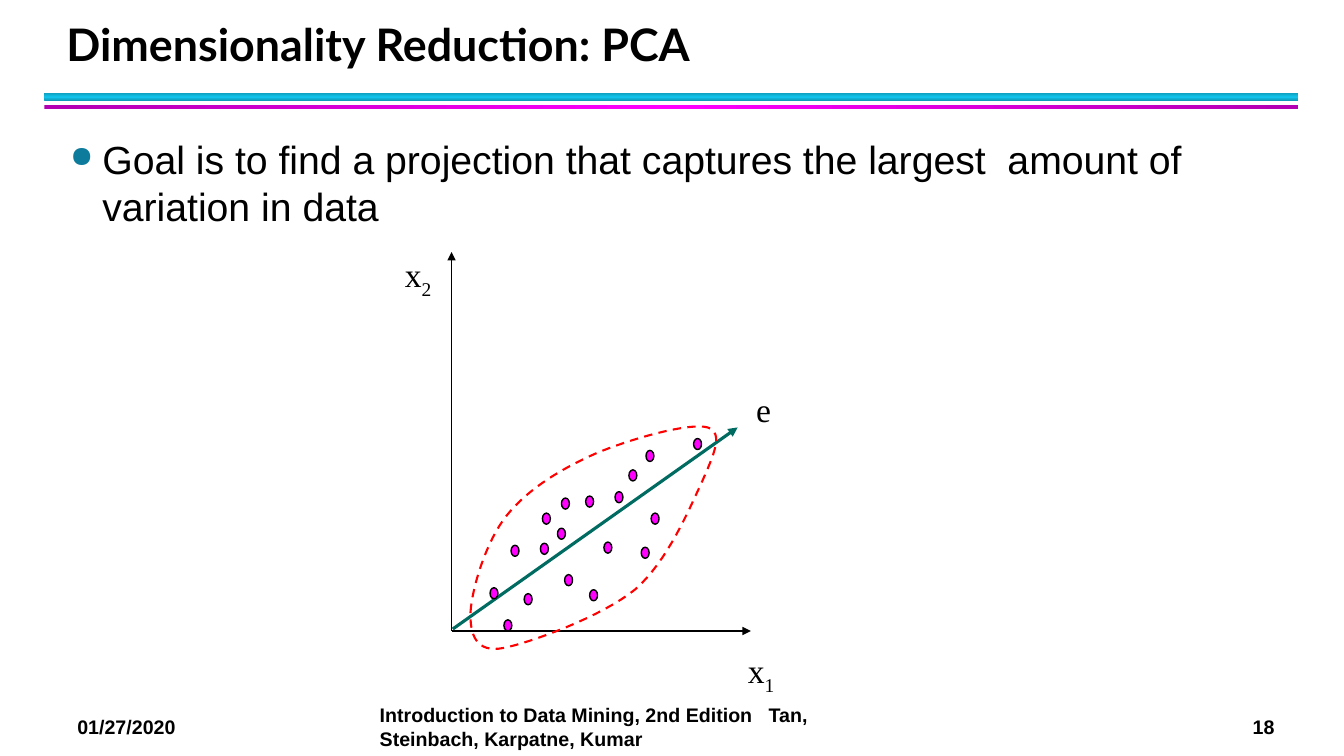
from collections import namedtuple
from copy import deepcopy

from lxml.etree import SubElement
from pptx import Presentation
from pptx.dml.color import RGBColor
from pptx.enum.dml import MSO_LINE
from pptx.enum.shapes import MSO_CONNECTOR, MSO_SHAPE
from pptx.enum.text import MSO_ANCHOR, PP_ALIGN
from pptx.oxml.ns import qn
from pptx.util import Cm, Pt

Box = namedtuple("Box", "left top width height")

BLACK, MAGENTA, RED, GREEN, TEAL = "000000", "FF00FF", "FF0000", "006B61", "0C7B9C"
BANDS = [
    (0, 0.2, 90, ("0E9BBA", "12C2E9", "0E9BBA")),
    (0.31, 0.1, 0, ("B200B2", MAGENTA, "B200B2")),
]
DOT_WIDTH, DOT_HEIGHT = 0.2, 0.28
DOTS = [
    (1.6, 2.02), (2.39, 2.83), (1.07, 0.95), (2.77, 2.45), (2.34, 2.07), (3.94, 2.1),
    (3.58, 0.9), (2.95, 1.28), (3.48, 3.26), (5.13, 2.83), (6.2, 4.71), (1.93, 0.8),
    (4.22, 3.37), (5, 4.41), (2.87, 3.21), (4.57, 3.92), (4.88, 1.97), (1.42, 0.14),
]
OUTLINE_START = (0.48, 0.48)
OUTLINE_CURVES = [
    ((0.51, 1.04), (0.86, 2.26), (1.4, 2.92)),
    ((1.93, 3.58), (2.77, 4.09), (3.63, 4.47)),
    ((4.47, 4.83), (5.99, 5.26), (6.45, 5.13)),
    ((6.88, 5), (6.6, 4.42), (6.3, 3.73)),
    ((5.99, 3.07), (5.44, 1.75), (4.62, 1.04)),
    ((3.78, 0.36), (1.98, -0.3), (1.3, -0.43)),
    ((0.61, -0.56), (0.46, -0.08), OUTLINE_START),
]
CURVE_STEPS = 16


def color(value):
    return RGBColor.from_string(value)


def apply_format(target, values):
    for name, value in values.items():
        setattr(target, name, value)


def place(shape, box):
    apply_format(shape, {name: Cm(value) for name, value in box._asdict().items()})


def add_run(paragraph, text, size, font_name, bold=False):
    run = paragraph.add_run()
    run.text = text
    apply_format(run.font, {"size": Pt(size), "name": font_name, "bold": bold})
    run.font.color.rgb = color(BLACK)
    return run


def add_text_box(slide, box, wrap=True, anchor=MSO_ANCHOR.TOP):
    shape = slide.shapes.add_textbox(*map(Cm, box))
    apply_format(shape.text_frame, {"word_wrap": wrap, "vertical_anchor": anchor})
    return shape.text_frame.paragraphs[0]


def add_bands(slide, box):
    for offset, height, angle, colors in BANDS:
        band = slide.shapes.add_shape(
            MSO_SHAPE.RECTANGLE, Cm(box.left), Cm(box.top + offset), Cm(box.width), Cm(height)
        )
        band.shadow.inherit = False
        band.line.fill.background()
        band.fill.gradient()
        band.fill.gradient_angle = angle
        stop_list = next(band._element.iter(qn("a:gsLst")))
        stop_list.append(deepcopy(stop_list[0]))
        for index, (stop, value) in enumerate(zip(band.fill.gradient_stops, colors)):
            stop.position = index / 2
            stop.color.rgb = color(value)


def add_title(slide, box):
    title = slide.shapes.title
    place(title, box)
    apply_format(title.text_frame, {"vertical_anchor": MSO_ANCHOR.BOTTOM, "word_wrap": True})
    paragraph = title.text_frame.paragraphs[0]
    apply_format(paragraph, {"alignment": PP_ALIGN.LEFT, "line_spacing": Pt(36)})
    add_run(paragraph, "Dimensionality Reduction: PCA", 32, "Lato", True)


def add_goal(slide, box):
    paragraph = add_text_box(slide, box)
    properties = paragraph._p.get_or_add_pPr()
    properties.set("marL", str(Cm(0.81)))
    properties.set("indent", str(-Cm(0.81)))
    bullet_color = SubElement(properties, qn("a:buClr"))
    SubElement(bullet_color, qn("a:srgbClr"), val=TEAL)
    SubElement(properties, qn("a:buSzPct"), val="75000")
    SubElement(properties, qn("a:buChar"), char="●")
    paragraph.space_after = Pt(4)
    text = "Goal is to find a projection that captures the largest  amount of variation in data"
    add_run(paragraph, text, 28, "Arial")


def add_arrow(slide, start, end, line_color, width):
    arrow = slide.shapes.add_connector(MSO_CONNECTOR.STRAIGHT, *map(Cm, start + end))
    arrow.line.color.rgb = color(line_color)
    arrow.line.width = Pt(width)
    SubElement(arrow.line._get_or_add_ln(), qn("a:tailEnd"), type="triangle")
    SubElement(arrow._element.spPr, qn("a:effectLst"))


def curve_points():
    start = OUTLINE_START
    for first, second, end in OUTLINE_CURVES:
        for step in range(1, CURVE_STEPS + 1):
            t = step / CURVE_STEPS
            weights = ((1 - t) ** 3, 3 * t * (1 - t) ** 2, 3 * t * t * (1 - t), t ** 3)
            yield tuple(
                sum(weight * value for weight, value in zip(weights, values))
                for values in zip(start, first, second, end)
            )
        start = end


def add_label(slide, box, text, subscript=""):
    paragraph = add_text_box(slide, box, False, MSO_ANCHOR.MIDDLE)
    paragraph.alignment = PP_ALIGN.CENTER
    add_run(paragraph, text, 24, "Times New Roman")
    if subscript:
        run = add_run(paragraph, subscript, 24, "Times New Roman")
        run._r.get_or_add_rPr().set("baseline", "-25000")


def add_projection(slide, box):
    bottom = box.top + box.height

    def at(across, up):
        return box.left + across, bottom - up

    add_arrow(slide, at(0, 0), at(0, box.height), BLACK, 1)
    add_arrow(slide, at(0, 0), at(box.width, 0), BLACK, 1)
    add_arrow(slide, at(0.03, 0.05), at(7.21, 5.13), GREEN, 2.25)

    for across, up in DOTS:
        left, top = at(across - DOT_WIDTH / 2, up + DOT_HEIGHT / 2)
        dot = slide.shapes.add_shape(
            MSO_SHAPE.OVAL, Cm(left), Cm(top), Cm(DOT_WIDTH), Cm(DOT_HEIGHT)
        )
        dot.shadow.inherit = False
        dot.fill.solid()
        dot.fill.fore_color.rgb = color(MAGENTA)
        dot.line.color.rgb = color(BLACK)
        dot.line.width = Pt(1)

    builder = slide.shapes.build_freeform(*map(Cm, at(*OUTLINE_START)))
    builder.add_line_segments([tuple(map(Cm, at(*point))) for point in curve_points()])
    outline = builder.convert_to_shape()
    outline.shadow.inherit = False
    outline.fill.background()
    outline.line.color.rgb = color(RED)
    apply_format(outline.line, {"width": Pt(1.5), "dash_style": MSO_LINE.DASH})

    add_label(slide, Box(*at(-1.45, box.height), 1.22, 1.27), "x", "2")
    add_label(slide, Box(*at(7.19, -0.43), 1.22, 1.27), "x", "1")
    add_label(slide, Box(*at(7.42, 6.22), 0.89, 1.27), "e")


def add_footer(slide, box):
    middle = box.top + box.height / 2
    footer = "Introduction to Data Mining, 2nd Edition   Tan, Steinbach, Karpatne, Kumar"
    parts = [
        ("01/27/2020", 0, 4.52, 0.86, True),
        (footer, 7.62, 13.82, box.height, True),
        ("18", box.width - 1.12, 1.12, 0.86, False),
    ]
    for text, offset, width, height, wrap in parts:
        part_box = Box(box.left + offset, middle - height / 2, width, height)
        add_run(add_text_box(slide, part_box, wrap), text, 14, "Arial", True)


def main():
    presentation = Presentation()
    apply_format(presentation, {"slide_width": Cm(33.87), "slide_height": Cm(19.05)})
    slide = presentation.slides.add_slide(presentation.slide_layouts[5])
    add_bands(slide, Box(1.12, 2.34, 31.6, 0.41))
    add_title(slide, Box(1.42, 0.43, 30.66, 1.47))
    add_goal(slide, Box(1.52, 3.28, 30.81, 2.6))
    add_projection(slide, Box(11.38, 6.35, 7.54, 9.55))
    add_footer(slide, Box(1.7, 17.6, 30.74, 1.45))
    presentation.save("out.pptx")


if __name__ == "__main__":
    main()
